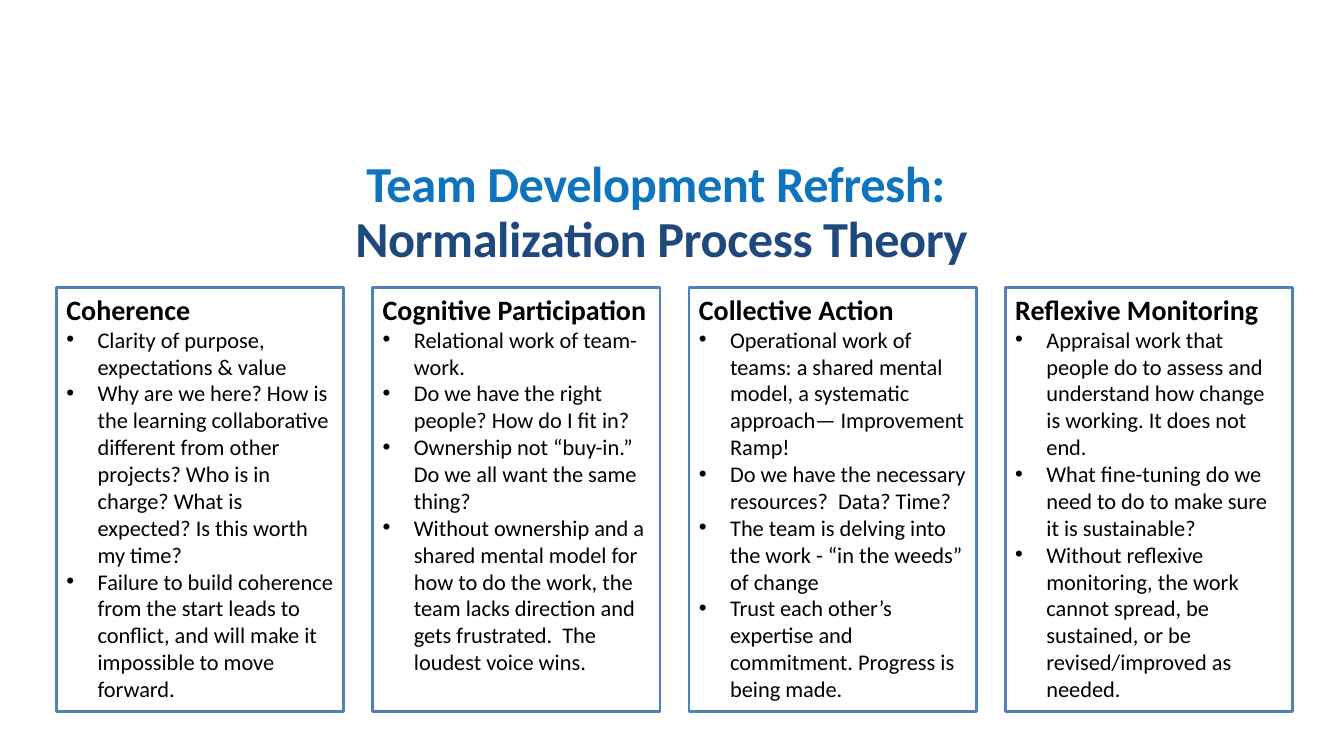
"""Build a slide on team development with four Normalization Process Theory panels."""
from lxml import etree
from pptx import Presentation
from pptx.dml.color import RGBColor
from pptx.enum.shapes import MSO_SHAPE
from pptx.enum.text import MSO_ANCHOR, MSO_AUTO_SIZE, PP_ALIGN
from pptx.oxml.ns import qn
from pptx.util import Inches, Pt

RECTANGLE = MSO_SHAPE.RECTANGLE
TOP = MSO_ANCHOR.TOP
NO_AUTOFIT = MSO_AUTO_SIZE.NONE
GROW_TO_TEXT = MSO_AUTO_SIZE.SHAPE_TO_FIT_TEXT
CENTER = PP_ALIGN.CENTER
LEFT = PP_ALIGN.LEFT

BRIGHT_BLUE = RGBColor(0x0E, 0x74, 0xBD)
NAVY = RGBColor(0x1F, 0x49, 0x7D)
BORDER_BLUE = RGBColor(0x4F, 0x81, 0xBD)
BLACK = RGBColor(0, 0, 0)
WHITE = RGBColor(0xFF, 0xFF, 0xFF)

FONT = "Calibri"
FIRST_LEFT, LAST_LEFT = 0.56, 9.97
PANEL_TOP, PANEL_WIDTH, PANEL_HEIGHT = 2.85, 2.85, 4.21
BULLET_INDENT = Inches(0.31)

TITLE_LINES = [
    ("Team Development Refresh: ", BRIGHT_BLUE),
    ("Normalization Process Theory", NAVY),
]
PANELS = [
    ("Coherence", [
        "Clarity of purpose, expectations & value",
        "Why are we here? How is the learning collaborative different from other "
        "projects? Who is in charge? What is expected? Is this worth my time?",
        "Failure to build coherence from the start leads to conflict, and will make "
        "it impossible to move forward.",
    ]),
    ("Cognitive Participation", [
        "Relational work of team-work.",
        "Do we have the right people? How do I fit in?",
        "Ownership not “buy-in.” Do we all want the same thing?",
        "Without ownership and a shared mental model for how to do the work, the team "
        "lacks direction and gets frustrated.  The loudest voice wins.",
    ]),
    ("Collective Action", [
        "Operational work of teams: a shared mental model, a systematic approach— "
        "Improvement Ramp!",
        "Do we have the necessary resources?  Data? Time?",
        "The team is delving into the work - “in the weeds” of change",
        "Trust each other’s expertise and commitment. Progress is being made.",
    ]),
    ("Reflexive Monitoring", [
        "Appraisal work that people do to assess and understand how change is "
        "working. It does not end.",
        "What fine-tuning do we need to do to make sure it is sustainable?",
        "Without reflexive monitoring, the work cannot spread, be sustained, or be "
        "revised/improved as needed.",
    ]),
]


def set_font(paragraph, size, bold):
    """Set the typeface, size and weight of a whole paragraph."""
    paragraph.font.name = FONT
    paragraph.font.size = Pt(size)
    paragraph.font.bold = bold


def add_bullet(paragraph):
    """Give a paragraph a hanging round bullet."""
    properties = paragraph._p.get_or_add_pPr()
    properties.set("marL", str(BULLET_INDENT))
    properties.set("indent", str(-BULLET_INDENT))
    etree.SubElement(properties, qn("a:buFont")).set("typeface", "Arial")
    etree.SubElement(properties, qn("a:buChar")).set("char", "•")


def format_title(title):
    """Place the title and write its two coloured lines."""
    title.left, title.top = Inches(FIRST_LEFT), Inches(1.53)
    title.width, title.height = Inches(12), Inches(0.79)
    frame = title.text_frame
    frame.auto_size = NO_AUTOFIT
    frame.vertical_anchor = TOP
    paragraph = frame.paragraphs[0]
    paragraph.alignment = CENTER
    paragraph.line_spacing = 0.9
    set_font(paragraph, 36, True)
    for index, (text, color) in enumerate(TITLE_LINES):
        if index:
            paragraph.add_line_break()
        run = paragraph.add_run()
        run.text = text
        run.font.color.rgb = color
        run._r.get_or_add_rPr().set("spc", "-30")


def add_panel(slide, left, heading, points):
    """Add an outlined panel with a heading and bullet points."""
    panel = slide.shapes.add_shape(
        RECTANGLE, Inches(left), Inches(PANEL_TOP),
        Inches(PANEL_WIDTH), Inches(PANEL_HEIGHT))
    panel.shadow.inherit = False
    panel.fill.solid()
    panel.fill.fore_color.rgb = WHITE
    panel.line.color.rgb = BORDER_BLUE
    panel.line.width = Pt(2)
    frame = panel.text_frame
    frame.word_wrap = True
    frame.auto_size = GROW_TO_TEXT
    frame.vertical_anchor = TOP
    for index, text in enumerate([heading, *points]):
        paragraph = frame.add_paragraph() if index else frame.paragraphs[0]
        paragraph.text = text
        paragraph.alignment = LEFT
        if index:
            add_bullet(paragraph)
        set_font(paragraph, 16 if index else 20, index == 0)
        paragraph.font.color.rgb = BLACK


def main():
    """Build and save the presentation."""
    presentation = Presentation()
    presentation.slide_width = Inches(13.33)
    presentation.slide_height = Inches(7.5)
    slide = presentation.slides.add_slide(presentation.slide_layouts[5])
    format_title(slide.shapes.title)
    step = (LAST_LEFT - FIRST_LEFT) / (len(PANELS) - 1)
    for index, (heading, points) in enumerate(PANELS):
        add_panel(slide, FIRST_LEFT + index * step, heading, points)
    presentation.save("out.pptx")


if __name__ == "__main__":
    main()
